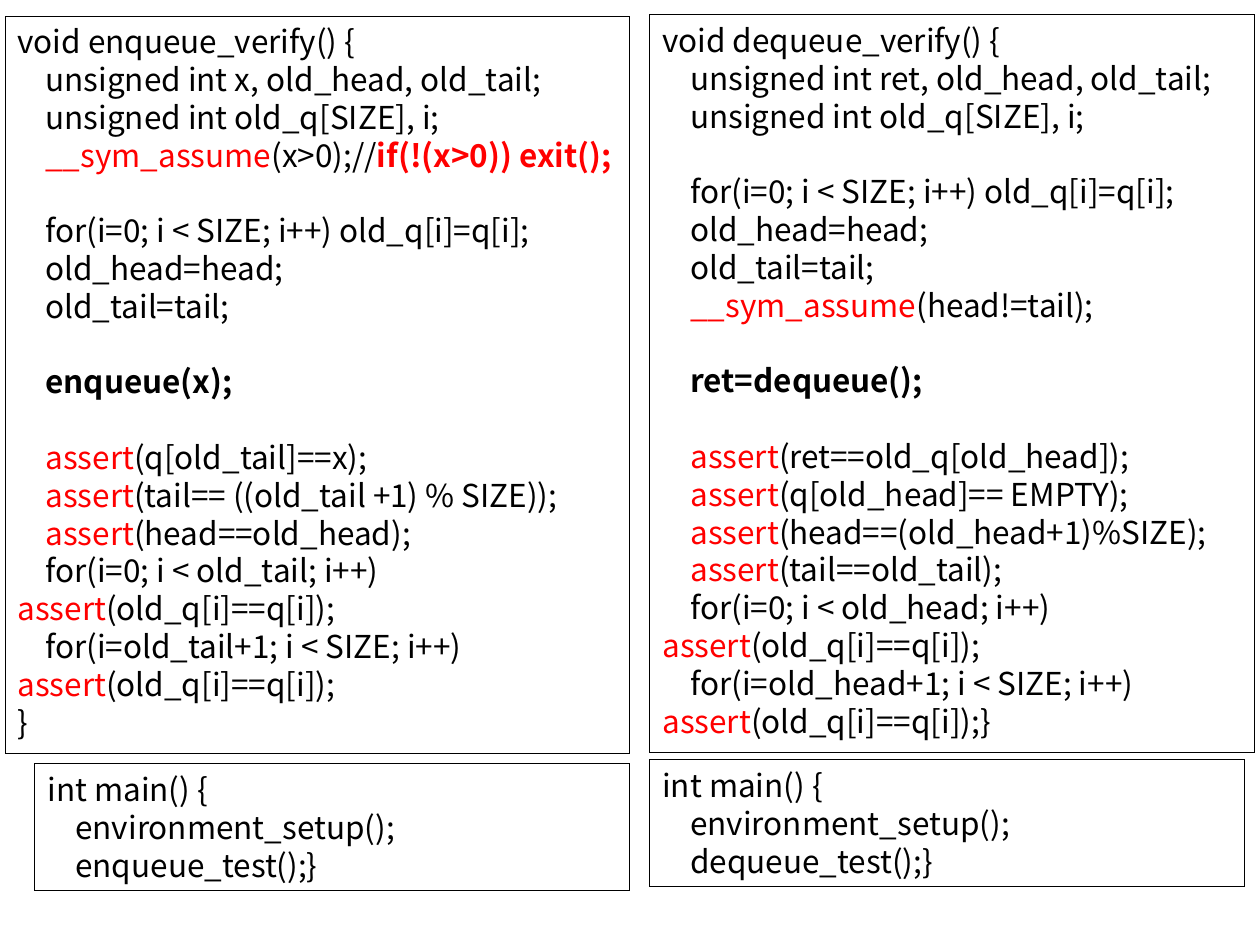
from dataclasses import dataclass

from pptx import Presentation
from pptx.dml.color import RGBColor
from pptx.enum.text import MSO_AUTO_SIZE as AutoSize
from pptx.util import Pt

EMU_PER_PX = 914400 / 126


@dataclass(frozen=True)
class Theme:
    font: str = "Noto Sans CJK KR"
    code_size: int = 18
    line_height: float = 21.6
    indent: int = 28
    ink: RGBColor = RGBColor(0, 0, 0)
    accent: RGBColor = RGBColor(255, 0, 0)


@dataclass(frozen=True)
class Box:
    left: int
    top: int
    width: int
    height: int


@dataclass(frozen=True)
class Run:
    text: str
    accent: bool = False
    bold: bool = False


@dataclass(frozen=True)
class Line:
    runs: tuple
    indented: bool = True
    gap: bool = False


THEME = Theme()


def px(value):
    return round(value * EMU_PER_PX)


def outer(text):
    return Line((Run(text),), indented=False)


def plain(text, gap=False):
    return Line((Run(text),), gap=gap)


def strong(text):
    return Line((Run(text, bold=True),), gap=True)


def check(arguments, gap=False):
    return Line((Run("assert", accent=True), Run(arguments)), gap=gap)


def assume(arguments, *notes):
    return Line((Run("__sym_assume", accent=True), Run(arguments), *notes))


def loop_check(loop, ending=""):
    return Line((Run(loop + " \v"), Run("assert", accent=True),
                 Run("(old_q[i]==q[i]);" + ending)))


SAVE_QUEUE = [
    plain("for(i=0; i < SIZE; i++) old_q[i]=q[i];", gap=True),
    plain("old_head=head;"),
    plain("old_tail=tail;"),
]

ENQUEUE_CODE = [
    outer("void enqueue_verify() {"),
    plain("unsigned int x, old_head, old_tail;"),
    plain("unsigned int old_q[SIZE], i;"),
    assume("(x>0);//", Run("if(!(x>0)) exit();", accent=True, bold=True)),
    *SAVE_QUEUE,
    strong("enqueue(x);"),
    check("(q[old_tail]==x);", gap=True),
    check("(tail== ((old_tail +1) % SIZE));"),
    check("(head==old_head);"),
    loop_check("for(i=0; i < old_tail; i++)"),
    loop_check("for(i=old_tail+1; i < SIZE; i++)"),
    outer("}"),
]

DEQUEUE_CODE = [
    outer("void dequeue_verify() {"),
    plain("unsigned int ret, old_head, old_tail;"),
    plain("unsigned int old_q[SIZE], i;"),
    *SAVE_QUEUE,
    assume("(head!=tail);"),
    strong("ret=dequeue();"),
    check("(ret==old_q[old_head]);", gap=True),
    check("(q[old_head]== EMPTY);"),
    check("(head==(old_head+1)%SIZE);"),
    check("(tail==old_tail);"),
    loop_check("for(i=0; i < old_head; i++)"),
    loop_check("for(i=old_head+1; i < SIZE; i++)", "}"),
]


def main_code(test):
    return [outer("int main() {"), plain("environment_setup();"), plain(test + "();}")]


def add_run(paragraph, text, source):
    run = paragraph.add_run()
    run.text = text
    run.font.name = THEME.font
    run.font.size = Pt(THEME.code_size)
    run.font.bold = source.bold
    run.font.color.rgb = THEME.accent if source.accent else THEME.ink


def write_line(paragraph, line):
    if line.indented:
        properties = paragraph._p.get_or_add_pPr()
        properties.set("marL", "0")
        properties.set("indent", str(px(THEME.indent)))
    if line.gap:
        paragraph.space_before = Pt(THEME.line_height)
    for source in line.runs:
        text, *broken = source.text.split("\v")
        add_run(paragraph, text, source)
        if broken:
            paragraph.add_line_break()


def add_code_panel(slide, box, lines):
    panel = slide.shapes.add_textbox(px(box.left), px(box.top), px(box.width), px(box.height))
    panel.fill.background()
    panel.line.color.rgb = THEME.ink
    frame = panel.text_frame
    frame.word_wrap = True
    frame.auto_size = AutoSize.SHAPE_TO_FIT_TEXT
    for index, line in enumerate(lines):
        paragraph = frame.add_paragraph() if index else frame.paragraphs[0]
        write_line(paragraph, line)


def main():
    presentation = Presentation()
    presentation.slide_width = px(1260)
    presentation.slide_height = px(945)
    slide = presentation.slides.add_slide(presentation.slide_layouts[6])
    add_code_panel(slide, Box(5, 16, 625, 738), ENQUEUE_CODE)
    add_code_panel(slide, Box(650, 15, 605, 738), DEQUEUE_CODE)
    add_code_panel(slide, Box(35, 764, 595, 127), main_code("enqueue_test"))
    add_code_panel(slide, Box(650, 760, 595, 127), main_code("dequeue_test"))
    presentation.save("out.pptx")


if __name__ == "__main__":
    main()
